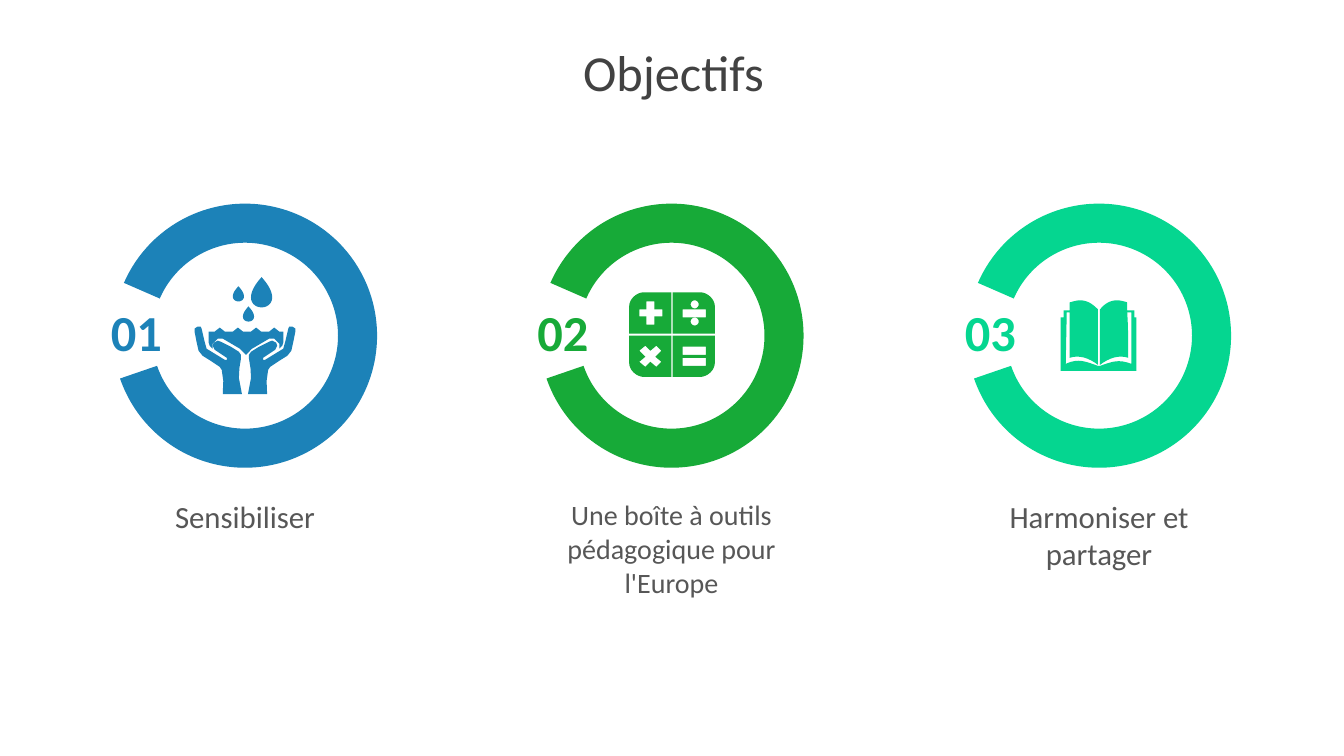
from dataclasses import dataclass
from math import cos, pi, sin

from pptx import Presentation
from pptx.dml.color import RGBColor as RGB
from pptx.enum.shapes import MSO_SHAPE as SHAPE
from pptx.enum.text import MSO_ANCHOR as ANCHOR, PP_ALIGN as ALIGN
from pptx.util import Inches, Pt


@dataclass(frozen=True)
class Theme:
    font: str = "Calibri"
    title: str = "424242"
    body: str = "575757"
    blue: str = "1C82B8"
    green: str = "17AA38"
    mint: str = "05D690"
    heading_size: int = 36
    label_size: int = 22
    long_label_size: int = 20


T = Theme()
RING_TOP = 2.02
RING_SIZE = 2.62

HAND = [
    (2.49, 3.75), (2.46, 3.91), (2.65, 3.91), (2.645, 3.78), (2.66, 3.67),
    (2.68, 3.64), (2.77, 3.58), (2.85, 3.53), (2.89, 3.48), (2.91, 3.39),
    (2.93, 3.29), (2.93, 3.26), (2.9, 3.24), (2.87, 3.24), (2.86, 3.26),
    (2.83, 3.39), (2.81, 3.46), (2.63, 3.57), (2.61, 3.57), (2.61, 3.55),
    (2.73, 3.47), (2.75, 3.43), (2.74, 3.4), (2.7, 3.38), (2.67, 3.39),
    (2.57, 3.44), (2.49, 3.49), (2.47, 3.52), (2.47, 3.56), (2.485, 3.65),
]
WATER_EDGE = [
    (2.81, 3.29), (2.81, 3.4), (2.8, 3.43), (2.77, 3.46), (2.77, 3.41),
    (2.72, 3.36), (2.67, 3.36), (2.5, 3.46), (2.44, 3.52),
]
BOOK = [
    (10.89, 3.63), (10.91, 3.63),
    (11.03, 3.59, 11.09, 3.56, 11.22, 3.61), (11.22, 3.1), (11.18, 3.1),
    (11.19, 3.25, 11.19, 3.4, 11.19, 3.55),
    (11.1, 3.52, 11, 3.55, 10.91, 3.62), (10.91, 3.07),
    (10.96, 3.01, 11.01, 2.98, 11.08, 2.98),
    (11.11, 2.98, 11.15, 2.99, 11.18, 3), (11.18, 3.08), (11.25, 3.08),
    (11.25, 3.15), (11.27, 3.15), (11.27, 3.68), (10.52, 3.68),
    (10.52, 3.15), (10.55, 3.15), (10.55, 3.08), (10.61, 3.08), (10.61, 3),
    (10.65, 2.99, 10.68, 2.98, 10.71, 2.98),
    (10.78, 2.98, 10.83, 3.01, 10.89, 3.07), (10.89, 3.62),
    (10.8, 3.55, 10.7, 3.52, 10.61, 3.55), (10.61, 3.1), (10.58, 3.1),
    (10.57, 3.61), (10.7, 3.55, 10.77, 3.59, 10.89, 3.63),
]
QUARTER = [
    (6.39, 2.9), (6.66, 2.9), (6.66, 3.31), (6.24, 3.31), (6.24, 3.04),
    (6.24, 2.97, 6.31, 2.9, 6.39, 2.9),
]
PLUS = [
    (6.41, 2.99), (6.41, 3.07), (6.34, 3.07), (6.34, 3.14), (6.41, 3.14),
    (6.41, 3.22), (6.49, 3.22), (6.49, 3.14), (6.57, 3.14), (6.57, 3.07),
    (6.49, 3.07), (6.49, 2.99),
]
TIMES = [
    (6.4, 3.43), (6.34, 3.48), (6.4, 3.54), (6.34, 3.59), (6.4, 3.64),
    (6.45, 3.59), (6.51, 3.64), (6.56, 3.59), (6.5, 3.54), (6.56, 3.48),
    (6.51, 3.43), (6.45, 3.48),
]


def mirror(steps, axis, offset=0):
    return [tuple(2 * axis - v if i % 2 == offset else v
                  for i, v in enumerate(step)) for step in steps]


def flatten(steps):
    points = []
    for step in steps:
        if len(step) == 2:
            points.append(step)
            continue
        ctrl = [points[-1], step[:2], step[2:4], step[4:]]
        for k in range(1, 9):
            t = k / 8
            weights = ((1 - t) ** 3, 3 * t * (1 - t) ** 2,
                       3 * t * t * (1 - t), t ** 3)
            points.append(tuple(sum(w * c[axis] for w, c in zip(weights, ctrl))
                                for axis in (0, 1)))
    return points


def bar(y):
    return [(6.77, y), (7, y), (7, y + 0.08), (6.77, y + 0.08)]


def dot(cx, cy, radius=0.04):
    return [(cx + radius * cos(a * pi / 12), cy + radius * sin(a * pi / 12))
            for a in range(24)]


def drop(left, top, width, height):
    angles = [k * pi / 18 for k in range(36)]
    return [(left + width * (0.5 + 0.65 * sin(a) * sin(a / 2)),
             top + height * (1 - cos(a)) / 2) for a in angles]


def paint(sp, color):
    sp.fill.solid()
    sp.fill.fore_color.rgb = RGB.from_string(color)
    sp.line.fill.background()
    sp.shadow.inherit = False


def add_outline(s, contours, color):
    paths = [[(Inches(x), Inches(y)) for x, y in flatten(c)] for c in contours]
    builder = s.shapes.build_freeform(*paths[0][0])
    builder.add_line_segments(paths[0][1:])
    for points in paths[1:]:
        builder.move_to(*points[0])
        builder.add_line_segments(points[1:])
    paint(builder.convert_to_shape(), color)


def write(tf, text, size, color, bold=False):
    tf.word_wrap = True
    p = tf.paragraphs[0]
    p.alignment = ALIGN.CENTER
    r = p.add_run()
    r.text = text
    r.font.name = T.font
    r.font.size = Pt(size)
    r.font.bold = bold
    r.font.color.rgb = RGB.from_string(color)
    return p


def add_title(s, text):
    sp = s.shapes.title
    sp.left, sp.top = Inches(0.35), Inches(0.37)
    sp.width, sp.height = Inches(12.66), Inches(0.79)
    sp.text_frame.vertical_anchor = ANCHOR.MIDDLE
    write(sp.text_frame, text, T.heading_size, T.title).line_spacing = 0.8


def add_text(s, left, top, width, height, text, size, color, bold=False):
    tf = s.shapes.add_textbox(Inches(left), Inches(top),
                              Inches(width), Inches(height)).text_frame
    write(tf, text, size, color, bold)
    return tf


def add_goal(s, left, number, label, size, color):
    ring = s.shapes.add_shape(SHAPE.BLOCK_ARC, Inches(left), Inches(RING_TOP),
                              Inches(RING_SIZE), Inches(RING_SIZE))
    for i, value in enumerate((122.141, 96.646, 0.148)):
        ring.adjustments[i] = value
    paint(ring, color)
    tf = add_text(s, left - 0.17, RING_TOP + 0.92, 0.71, 0.71,
                  number, T.heading_size, color, True)
    tf.margin_right = 0
    add_text(s, left, RING_TOP + 2.87, RING_SIZE, 1.72, label, size, T.body)


def add_hands(s, color):
    for hand in (HAND, mirror(HAND, 2.43)):
        add_outline(s, [hand], color)
    for box in ((2.49, 2.75, 0.21, 0.3), (2.41, 3.04, 0.11, 0.15),
                (2.31, 2.84, 0.11, 0.15)):
        add_outline(s, [drop(*box)], color)
    waves = [(2.18 + 0.18 * i + dx, y) for i in range(4)
             for dx, y in ((-0.05, 3.29), (0, 3.25), (0.05, 3.29))]
    left_edge = mirror(WATER_EDGE, 2.44)[::-1]
    add_outline(s, [waves + WATER_EDGE + left_edge], color)


def add_calculator(s, color):
    right = mirror(QUARTER, 6.665)
    quarters = [QUARTER, right, mirror(QUARTER, 3.32, 1), mirror(right, 3.32, 1)]
    signs = [PLUS, TIMES, bar(3.07), bar(3.44), bar(3.55),
             dot(6.89, 3.02), dot(6.89, 3.19)]
    add_outline(s, quarters + signs, color)


def main():
    prs = Presentation()
    prs.slide_width, prs.slide_height = Inches(13.33), Inches(7.5)
    s = prs.slides.add_slide(prs.slide_layouts[5])
    add_title(s, "Objectifs")
    add_goal(s, 1.12, "01", "Sensibiliser", T.label_size, T.blue)
    add_goal(s, 5.35, "02", "Une boîte à outils pédagogique pour l'Europe",
             T.long_label_size, T.green)
    add_goal(s, 9.59, "03", "Harmoniser et partager", T.label_size, T.mint)
    add_hands(s, T.blue)
    add_calculator(s, T.green)
    add_outline(s, [BOOK], T.mint)
    prs.save("out.pptx")


if __name__ == "__main__":
    main()
